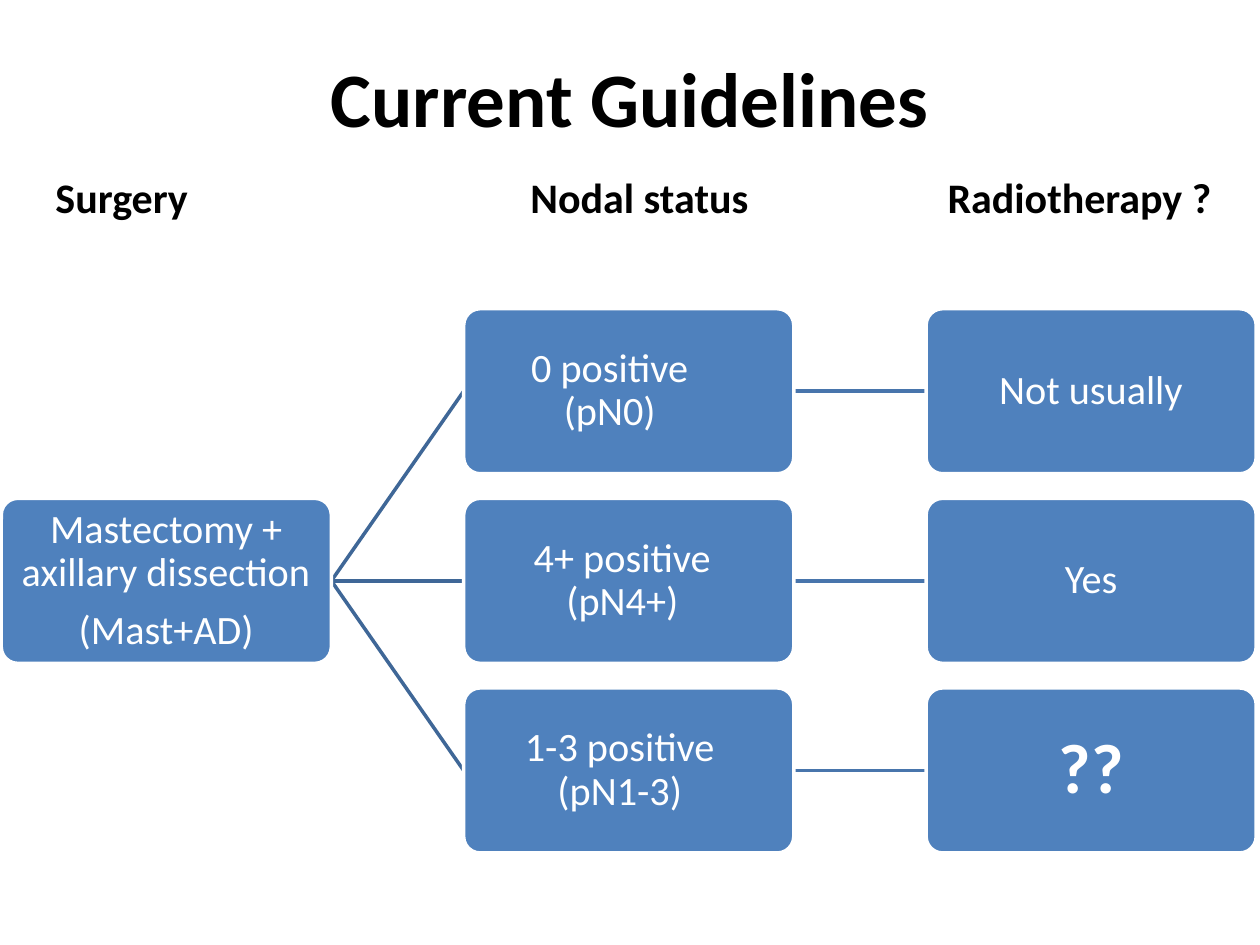
"""Build a slide with a left-to-right decision tree of current radiotherapy guidelines."""
from lxml import etree
from pptx import Presentation
from pptx.dml.color import RGBColor
from pptx.enum.shapes import MSO_CONNECTOR, MSO_SHAPE
from pptx.enum.text import MSO_ANCHOR, PP_ALIGN
from pptx.oxml.ns import qn
from pptx.util import Inches, Pt

CENTER, LEFT = PP_ALIGN.CENTER, PP_ALIGN.LEFT
MIDDLE, TOP = MSO_ANCHOR.MIDDLE, MSO_ANCHOR.TOP
STRAIGHT, ROUNDED = MSO_CONNECTOR.STRAIGHT, MSO_SHAPE.ROUNDED_RECTANGLE
COLORS = {"text": "000000", "node": "4F81BD", "white": "FFFFFF",
          "branch": "3F6797", "result": "4875AC"}
LEFT_X, TOP_Y = 0.01, 2.45
COL, ROW = 3.67, 1.505
NODE_W, NODE_H = 2.62, 1.31


def rgb(name):
    return RGBColor.from_string(COLORS[name])


def write(sp, text, size=23, color="white", bold=False, align=CENTER, anchor=MIDDLE,
          spacing=0.9, after=8, insets=(0.06, 0.06, 0.06, 0.06)):
    tf = sp.text_frame
    tf.word_wrap = True
    tf.vertical_anchor = anchor
    tf.margin_left, tf.margin_top, tf.margin_right, tf.margin_bottom = map(Inches, insets)
    tf.text = text
    for p in tf.paragraphs:
        p.alignment, p.line_spacing, p.space_after = align, spacing, Pt(after)
        for r in p.runs:
            r.font.name, r.font.size, r.font.bold = "Calibri", Pt(size), bold
            r.font.color.rgb = rgb(color)


prs = Presentation()
prs.slide_width, prs.slide_height = Inches(10), Inches(7.5)
s = prs.slides.add_slide(prs.slide_layouts[6])

title = s.shapes.add_textbox(Inches(0.5), Inches(0.3), Inches(9), Inches(0.93))
write(title, "Current Guidelines", size=44, color="text", bold=True, spacing=1, after=0)

nodes = [
    ("root", 0, 1, "Mastectomy + axillary dissection\n(Mast+AD)", {}),
    ("status0", 1, 0, "0 positive\v(pN0)", {"insets": (0.06, 0.06, 0.36, 0.06)}),
    ("status1", 1, 1, "4+ positive\v(pN4+)", {"insets": (0.06, 0.06, 0.16, 0.06)}),
    ("status2", 1, 2, "1-3 positive\v(pN1-3)", {"insets": (0.06, 0.06, 0.2, 0.06)}),
    ("answer0", 2, 0, "Not usually", {}),
    ("answer1", 2, 1, "Yes", {}),
    ("answer2", 2, 2, "??", {"size": 40, "bold": True}),
]
boxes = {}
for key, col, row, text, fmt in nodes:
    sp = s.shapes.add_shape(ROUNDED, Inches(LEFT_X + col * COL), Inches(TOP_Y + row * ROW),
                            Inches(NODE_W), Inches(NODE_H))
    sp.adjustments[0] = 0.1
    sp.shadow.inherit = False
    sp.fill.solid()
    sp.fill.fore_color.rgb = rgb("node")
    sp.line.color.rgb = rgb("white")
    sp.line.width = Pt(2)
    write(sp, text, **fmt)
    boxes[key] = sp

for row in range(3):
    for start, end, color in (("root", f"status{row}", "branch"),
                              (f"status{row}", f"answer{row}", "result")):
        line = s.shapes.add_connector(STRAIGHT, 0, 0, 0, 0)
        line.begin_connect(boxes[start], 3)
        line.end_connect(boxes[end], 1)
        line.line.color.rgb = rgb(color)
        line.line.width = Pt(2)
        etree.SubElement(line.element.spPr, qn("a:effectLst"))
        line.element.getparent().insert(2, line.element)

headings = s.shapes.add_textbox(Inches(0.12), Inches(1.31), Inches(9.88), Inches(0.5))
write(headings, "Surgery\tNodal status\tRadiotherapy ?", size=24, color="text", bold=True,
      align=LEFT, anchor=TOP, spacing=1, after=0, insets=(0.32, 0.05, 0.1, 0.05))
tabs = etree.SubElement(headings.text_frame.paragraphs[0]._p.get_or_add_pPr(), qn("a:tabLst"))
for stop in (3.77, 7.08):
    etree.SubElement(tabs, qn("a:tab"), pos=str(Inches(stop)), algn="l")

prs.save("out.pptx")
